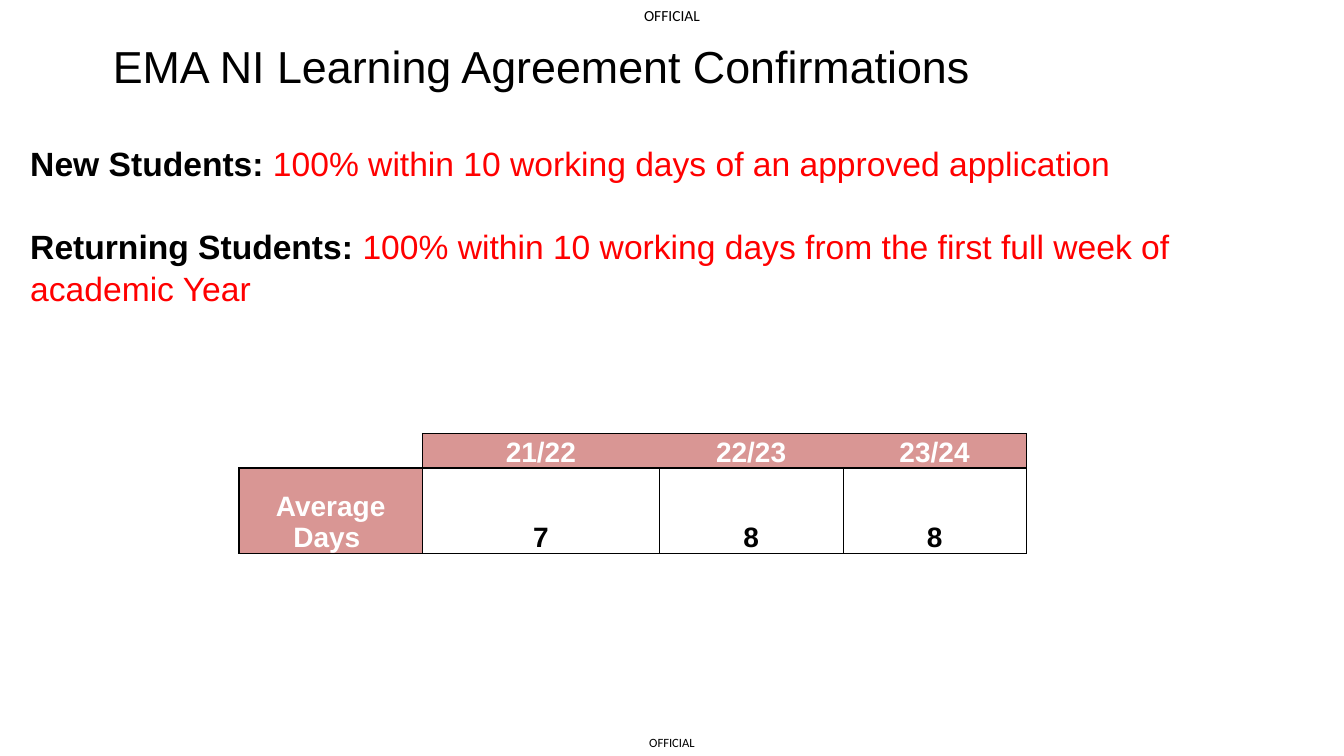
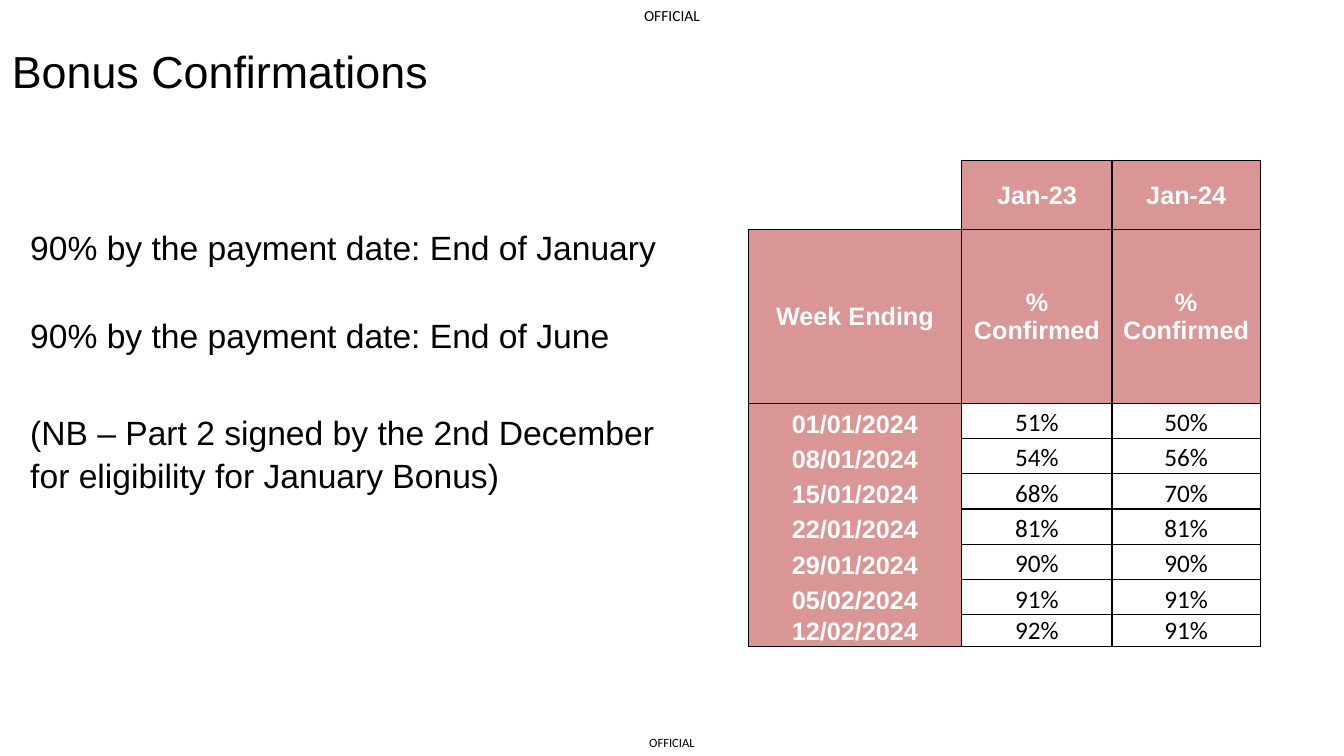
from dataclasses import dataclass
from typing import NamedTuple

from lxml.etree import SubElement
from pptx import Presentation
from pptx.dml.color import RGBColor
from pptx.enum.text import MSO_ANCHOR as Anchor, MSO_AUTO_SIZE as AutoSize, PP_ALIGN as Align
from pptx.oxml.ns import qn
from pptx.util import Pt

EMU_PER_PX = 9144  # 100 px to the inch


@dataclass(frozen=True)
class Theme:
    black: str = "000000"
    white: str = "FFFFFF"
    red: str = "FF0000"
    rose: str = "D99694"
    sans: str = "Arial"
    plain: str = "Calibri"
    title_size: int = 32
    body_size: int = 24
    line_spacing: float = 1.05
    border: float = 1
    hairline: float = 0.5


THEME = Theme()


class Area(NamedTuple):
    left: int
    top: int
    width: int
    height: int


class Style(NamedTuple):
    size: int
    color: str = THEME.black
    bold: bool = False
    font: str = THEME.sans


class Span(NamedTuple):
    text: str
    style: Style


class Para(NamedTuple):
    spans: list[Span]
    before: int = 0


class Mark(NamedTuple):
    area: Area
    size: int


class Cell(NamedTuple):
    text: str
    style: Style
    edges: str = "LRTB"
    hairlines: str = ""
    fill: str | None = None
    anchor: Anchor = Anchor.BOTTOM


# Styles and parts that the slides share
TITLE = Style(THEME.title_size)
BODY = Style(THEME.body_size)
LABEL = Style(THEME.body_size, bold=True)
TARGET = Style(THEME.body_size, THEME.red)
MARKING = "OFFICIAL"
MARKS = [Mark(Area(630, 723, 73, 27), 9), Mark(Area(623, 0, 87, 31), 11)]


def px(length: int) -> int:
    return length * EMU_PER_PX


def place(shape, area: Area) -> None:
    shape.left, shape.top, shape.width, shape.height = map(px, area)


def add_span(para, span: Span) -> None:
    run = para.add_run()
    run.text = span.text
    font = run.font
    font.name, font.size, font.bold = span.style.font, Pt(span.style.size), span.style.bold
    font.color.rgb = RGBColor.from_string(span.style.color)


def fill_title(page, text: str, area: Area) -> None:
    box = page.shapes.title
    place(box, area)
    frame = box.text_frame
    frame.vertical_anchor, frame.auto_size = Anchor.TOP, AutoSize.NONE
    para = frame.paragraphs[0]
    para.alignment, para.line_spacing = Align.CENTER, THEME.line_spacing
    add_span(para, Span(text, TITLE))


def fill_body(page, paras: list[Para], area: Area) -> None:
    box = page.placeholders[1]
    place(box, area)
    frame = box.text_frame
    frame.auto_size = AutoSize.NONE
    for index, item in enumerate(paras):
        para = frame.add_paragraph() if index else frame.paragraphs[0]
        properties = para._p.get_or_add_pPr()
        properties.set("marL", "0")
        properties.set("indent", "0")
        SubElement(properties, qn("a:buNone"))
        para.space_before, para.line_spacing = Pt(item.before), THEME.line_spacing
        for span in item.spans:
            add_span(para, span)


def add_marks(page) -> None:
    for mark in MARKS:
        box = page.shapes.add_textbox(*map(px, mark.area))
        frame = box.text_frame
        frame.word_wrap, frame.vertical_anchor = True, Anchor.MIDDLE
        frame.margin_left = frame.margin_right = frame.margin_top = frame.margin_bottom = 0
        para = frame.paragraphs[0]
        para.alignment = Align.CENTER
        add_span(para, Span(MARKING, Style(mark.size, font=THEME.plain)))


def set_borders(target, cell: Cell) -> None:
    properties = target._tc.get_or_add_tcPr()
    for side in "LRTB":
        line = SubElement(properties, qn(f"a:ln{side}"))
        if side in cell.edges:
            weight = THEME.hairline if side in cell.hairlines else THEME.border
            line.set("w", str(Pt(weight)))
            color = SubElement(SubElement(line, qn("a:solidFill")), qn("a:srgbClr"))
            color.set("val", THEME.black)
        else:
            SubElement(line, qn("a:noFill"))


def fill_cell(target, cell: Cell) -> None:
    set_borders(target, cell)
    if cell.fill:
        target.fill.solid()
        target.fill.fore_color.rgb = RGBColor.from_string(cell.fill)
    else:
        target.fill.background()
    target.vertical_anchor = cell.anchor
    target.margin_left = target.margin_right = target.margin_top = px(1)
    target.margin_bottom = 0
    para = target.text_frame.paragraphs[0]
    para.alignment = Align.CENTER
    if cell.text:
        add_span(para, Span(cell.text, cell.style))
    else:
        para.font.size = Pt(cell.style.size)


def add_grid(page, left: int, top: int, widths: list[int], heights: list[int],
             rows: list[list[Cell]]) -> None:
    area = Area(left, top, sum(widths), sum(heights))
    table = page.shapes.add_table(len(rows), len(widths), *map(px, area)).table
    table.first_row = table.horz_banding = False
    for column, width in zip(table.columns, widths):
        column.width = px(width)
    for row, height, cells in zip(table.rows, heights, rows):
        row.height = px(height)
        for target, cell in zip(row.cells, cells):
            fill_cell(target, cell)


def add_page(deck, title: str, title_area: Area, paras: list[Para], body_area: Area):
    page = deck.slides.add_slide(deck.slide_layouts[1])
    add_marks(page)
    fill_title(page, title, title_area)
    fill_body(page, paras, body_area)
    return page


def build_agreements(deck) -> None:
    paras = [
        Para([Span("New Students: ", LABEL),
              Span("100% within 10 working days of an approved application", TARGET)]),
        Para([Span("Returning Students: ", LABEL),
              Span("100% within 10 working days from the first full week of academic Year",
                   TARGET)], before=29),
    ]
    page = add_page(deck, "EMA NI Learning Agreement Confirmations ", Area(-17, 31, 1121, 64),
                    paras, Area(20, 135, 1281, 241))

    # Average days by year
    head = Style(20, THEME.white, True)
    value = Style(20, bold=True)
    years = [("21/22", "LTB"), ("22/23", "TB"), ("23/24", "RTB")]
    days = [("7", "R"), ("8", "LR"), ("8", "L")]
    rows = [
        [Cell("", head, "RB")]
        + [Cell(year, head, edges, fill=THEME.rose) for year, edges in years],
        [Cell("Average Days ", head, fill=THEME.rose)]
        + [Cell(count, value, hairlines=thin) for count, thin in days],
    ]
    add_grid(page, 237, 430, [182, 235, 182, 182], [34, 85], rows)


def build_bonus(deck) -> None:
    paras = [
        Para([Span("90% by the payment date: End of January", BODY)]),
        Para([Span("90% by the payment date: End of June", BODY)], before=33),
        Para([Span("(NB – Part 2 signed by the 2nd December for eligibility for January Bonus)",
                   BODY)], before=39),
    ]
    page = add_page(deck, "Bonus Confirmations ", Area(-128, 36, 705, 75),
                    paras, Area(20, 218, 680, 588))

    # Share confirmed by week
    head = Style(18, THEME.white, True)
    value = Style(18, font=THEME.plain)
    weeks = [
        ("01/01/2024", "51%", "50%"),
        ("08/01/2024", "54%", "56%"),
        ("15/01/2024", "68%", "70%"),
        ("22/01/2024", "81%", "81%"),
        ("29/01/2024", "90%", "90%"),
        ("05/02/2024", "91%", "91%"),
        ("12/02/2024", "92%", "91%"),
    ]

    def heading(text: str) -> Cell:
        return Cell(text, head, fill=THEME.rose, anchor=Anchor.MIDDLE)

    rows = [
        [Cell("", head, "RB"), heading("Jan-23"), heading("Jan-24")],
        [heading("Week Ending"), heading("% Confirmed"), heading("% Confirmed")],
    ]
    for index, (week, *shares) in enumerate(weeks):
        edges = "LR" + "T" * (index == 0) + "B" * (index == len(weeks) - 1)
        rows.append([Cell(week, head, edges, fill=THEME.rose)]
                    + [Cell(share, value) for share in shares])
    add_grid(page, 742, 159, [212, 149, 147], [69, 172] + [35] * 6 + [31], rows)


def main() -> None:
    deck = Presentation()
    deck.slide_width, deck.slide_height = px(1333), px(750)
    build_agreements(deck)
    build_bonus(deck)
    deck.save("out.pptx")


if __name__ == "__main__":
    main()
